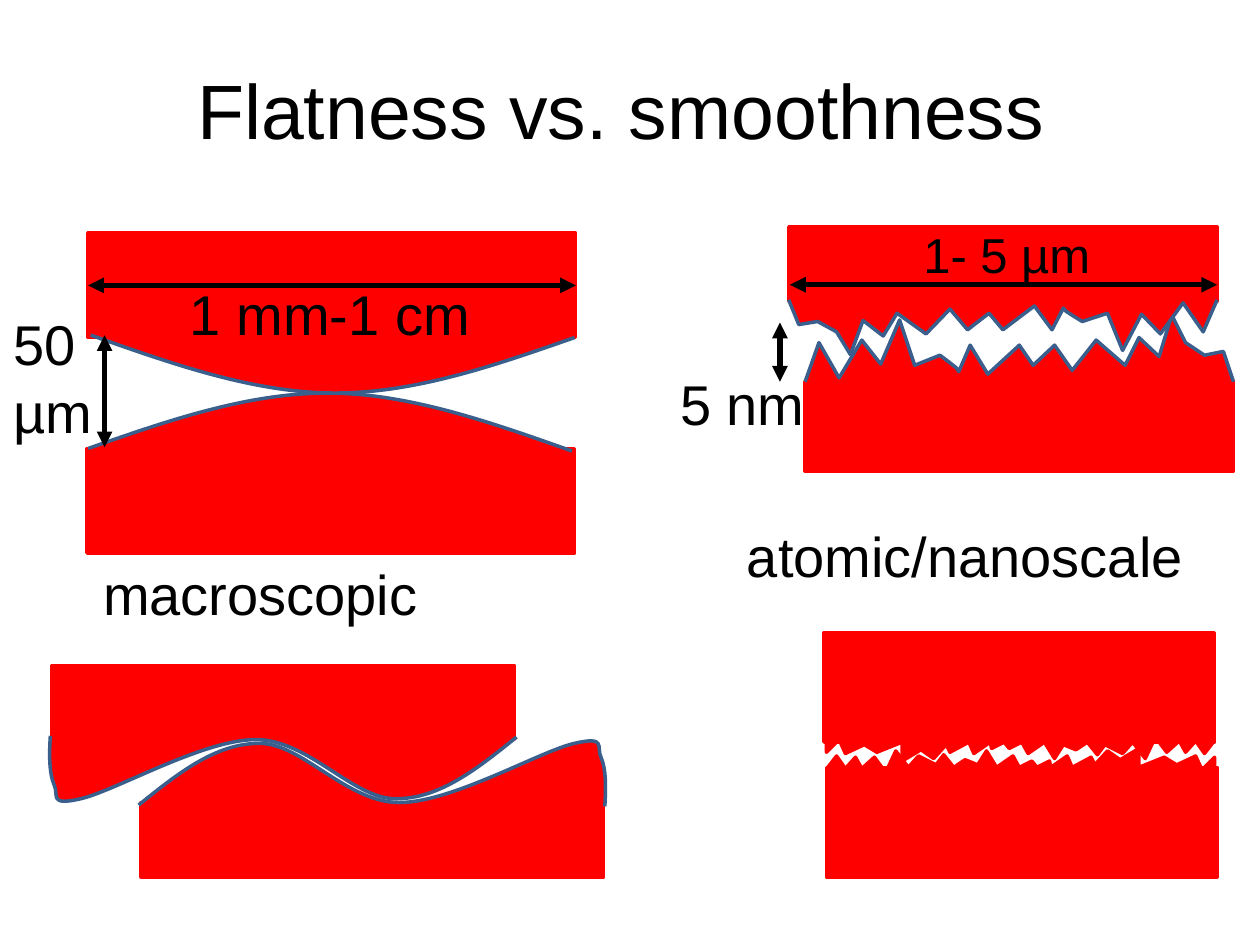
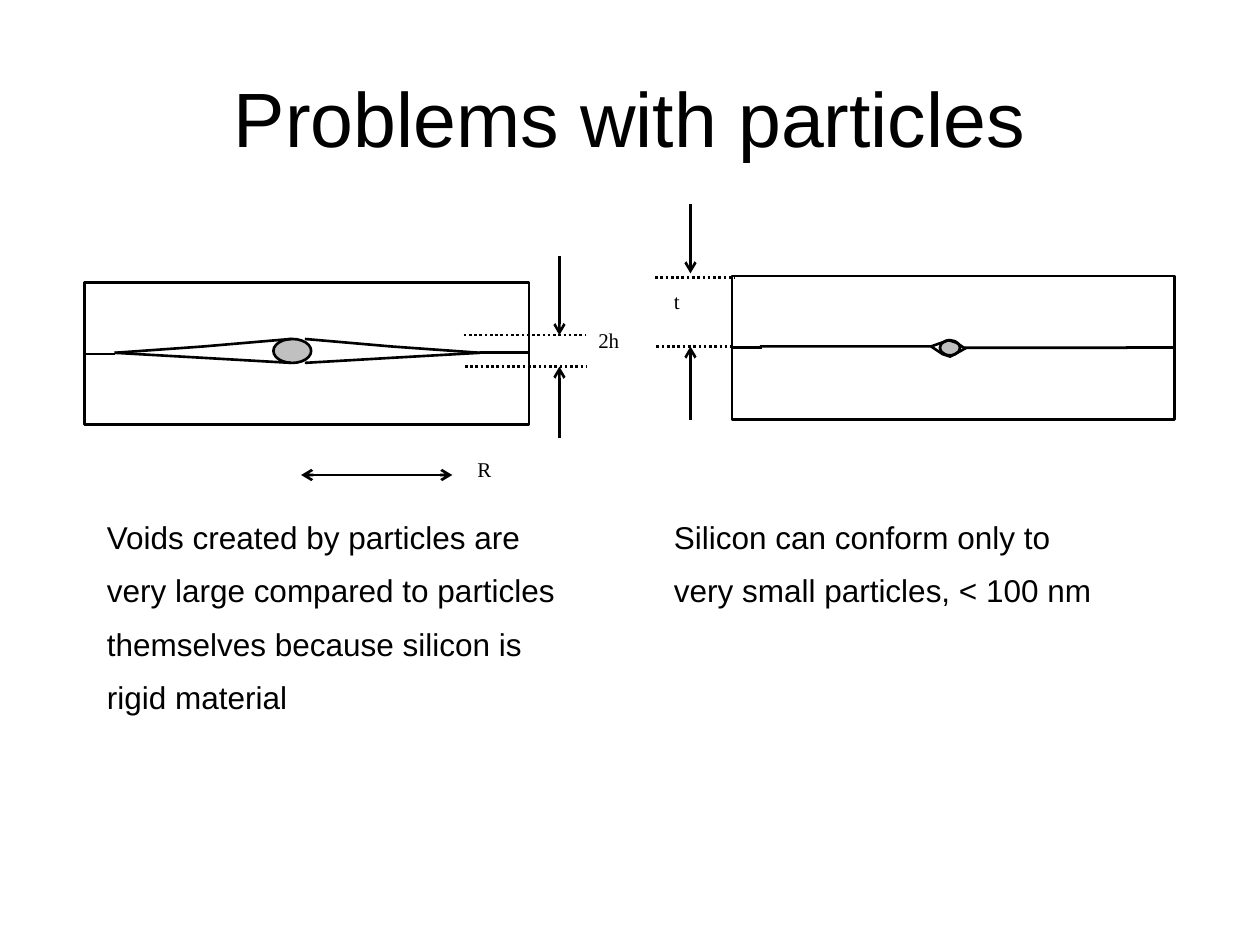
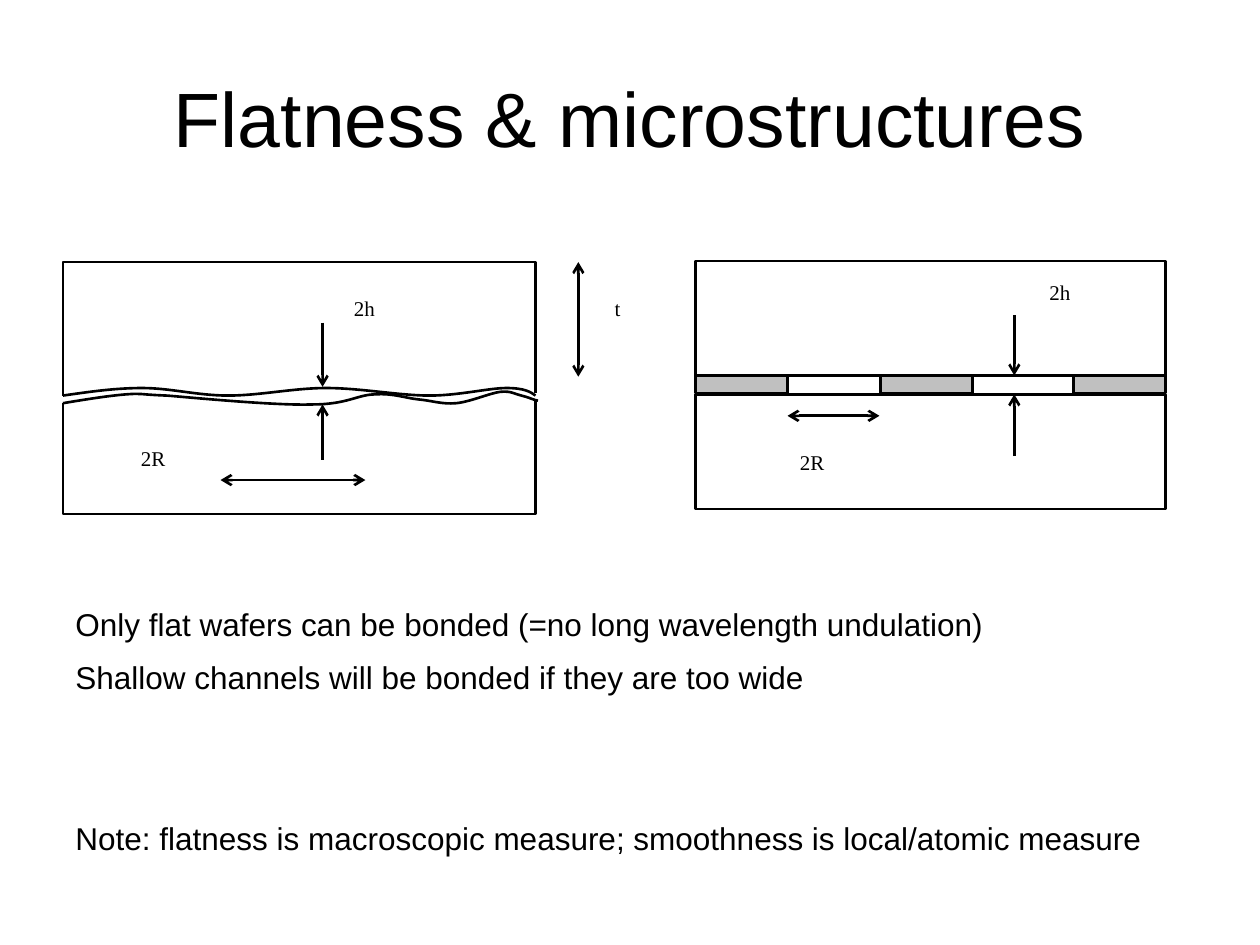
from dataclasses import dataclass
from typing import Optional

from lxml import etree
from pptx import Presentation
from pptx import util as u
from pptx.dml.color import RGBColor
from pptx.enum import dml, shapes, text
from pptx.oxml import ns

EMU_PER_PX = 9144  # 100 px to the inch
BLACK, WHITE, GREY, RED, BLUE = "000000", "FFFFFF", "C0C0C0", "FF0000", "3A5F8C"
SANS, SERIF = "Arial", "Times New Roman"

Points = list[tuple[float, float]]


@dataclass(frozen=True)
class Box:
    left: int
    top: int
    width: int
    height: int


@dataclass(frozen=True)
class Line:
    x1: int
    y1: int
    x2: int
    y2: int
    tail: bool = True
    head: bool = False
    dotted: bool = False


@dataclass(frozen=True)
class Label:
    words: str
    box: Box
    size: int = 12


@dataclass(frozen=True)
class Pair:
    """Two facing bodies; the upper surface is the lower one given a half turn."""
    lower: Box
    upper: Box
    surface: Points
    x_sum: int
    lower_base: int
    upper_base: int
    stretch: float = 1.0
    edge: str = BLUE
    curved: bool = False


def px(value: float) -> int:
    return u.Emu(round(value * EMU_PER_PX))


def color(value: str) -> RGBColor:
    return RGBColor.from_string(value)


def place(box: Box) -> tuple[int, int, int, int]:
    return px(box.left), px(box.top), px(box.width), px(box.height)


def paint(shape, fill: Optional[str], line: Optional[str], width: float = 1.5) -> None:
    shape.shadow.inherit = False
    if fill:
        shape.fill.solid()
        shape.fill.fore_color.rgb = color(fill)
    else:
        shape.fill.background()
    if line:
        shape.line.color.rgb = color(line)
        shape.line.width = u.Pt(width)
    else:
        shape.line.fill.background()


def add_preset(slide, box: Box, fill: str, *, kind=shapes.MSO_SHAPE.RECTANGLE,
               line: Optional[str] = BLACK, width: float = 1.5):
    shape = slide.shapes.add_shape(kind, *place(box))
    paint(shape, fill, line, width)
    return shape


def bend(shape) -> None:
    """Turn every three straight steps of an outline into one cubic curve."""
    steps = list(shape._element.iter(ns.qn("a:lnTo")))
    for i in range(0, len(steps), 3):
        first, *others = steps[i:i + 3]
        first.tag = ns.qn("a:cubicBezTo")
        for step in others:
            first.append(step[0])
            step.getparent().remove(step)


def add_outline(slide, points: Points, *, fill: Optional[str] = None,
                line: str = BLACK, width: float = 1.5, curved: bool = False) -> None:
    start, *rest = [(px(x), px(y)) for x, y in points]
    builder = slide.shapes.build_freeform(*start, scale=1.0)
    builder.add_line_segments(rest, close=False)
    shape = builder.convert_to_shape()
    paint(shape, fill, line, width)
    if curved:
        bend(shape)


def add_text(slide, words: str, box: Box, *, size: int, font: str = SANS,
             align=text.PP_ALIGN.LEFT, anchor=text.MSO_ANCHOR.TOP,
             fill: Optional[str] = None, gaps: tuple[int, ...] = (),
             tab: Optional[int] = None) -> None:
    """Write one paragraph per line; gaps holds the points above each one."""
    if fill:
        shape = add_preset(slide, box, fill, line=None)
    else:
        shape = slide.shapes.add_textbox(*place(box))
    frame = shape.text_frame
    frame.word_wrap = True
    frame.vertical_anchor = anchor
    frame.text = words
    for paragraph in frame.paragraphs:
        paragraph.alignment = align
        paragraph.font.size = u.Pt(size)
        paragraph.font.name = font
        paragraph.font.color.rgb = color(BLACK)
    for paragraph, gap in zip(frame.paragraphs, gaps):
        paragraph.space_before = u.Pt(gap)
        if tab:
            stops = etree.Element(ns.qn("a:tabLst"))
            etree.SubElement(stops, ns.qn("a:tab"), pos=str(px(tab)), algn="l")
            paragraph._p.pPr.find(ns.qn("a:defRPr")).addprevious(stops)


def add_line(slide, line: Line, *, width: float = 1.5, arrow: str = "arrow"):
    connector = slide.shapes.add_connector(
        shapes.MSO_CONNECTOR.STRAIGHT, px(line.x1), px(line.y1), px(line.x2), px(line.y2))
    connector.line.color.rgb = color(BLACK)
    connector.line.width = u.Pt(width)
    if line.dotted:
        connector.line.dash_style = dml.MSO_LINE.ROUND_DOT
    properties = connector.line._get_or_add_ln()
    for tag, shown in (("a:headEnd", line.head), ("a:tailEnd", line.tail)):
        if shown:
            etree.SubElement(properties, ns.qn(tag), type=arrow)
    etree.SubElement(connector._element.spPr, ns.qn("a:effectLst"))
    return connector


def add_labels(slide, labels: list[Label], *, font: str = SANS,
               fill: Optional[str] = None) -> None:
    for label in labels:
        add_text(slide, label.words, label.box, size=label.size, font=font, fill=fill)


def add_titled_slide(presentation, title: str, box: Box = Box(50, 30, 900, 125)):
    slide = presentation.slides.add_slide(presentation.slide_layouts[6])
    add_text(slide, title, box, size=44, align=text.PP_ALIGN.CENTER,
             anchor=text.MSO_ANCHOR.MIDDLE)
    return slide


def add_pair(slide, pair: Pair):
    """Draw both bodies and return the upper block."""
    turned = [(pair.x_sum - x, pair.upper_base + (pair.lower_base - y) * pair.stretch)
              for x, y in pair.surface]
    for box, surface in ((pair.lower, pair.surface), (pair.upper, turned)):
        block = add_preset(slide, box, RED, line=RED, width=2)
        add_outline(slide, surface, fill=RED, line=pair.edge, width=2, curved=pair.curved)
    return block


def add_half_frames(slide, left: int, right: int, seam: int, seam_end: int,
                    top: int, bottom: int) -> None:
    for edge in (top, bottom):
        add_outline(slide, [(seam_end, seam), (right, seam), (right, edge),
                            (left, edge), (left, seam)])


# Curved outlines: a start, then two control points and an end for each curve.
BOW = [(70, 356), (133, 334), (196, 312), (260, 312),
       (324, 312), (389, 335), (454, 358)]
WAVE = [(110, 639), (141, 614), (171, 590), (206, 590),
        (240, 590), (275, 637), (317, 637),
        (359, 637), (429, 596), (456, 590),
        (482, 584), (473, 593), (477, 601),
        (481, 610), (481, 625), (480, 640)]
UPPER_RIPPLE = [(50, 314), (71, 311), (91, 308), (113, 308),
                (135, 308), (157, 314), (181, 314),
                (206, 314), (233, 308), (259, 308),
                (286, 308), (317, 314), (341, 314),
                (364, 314), (388, 308), (402, 308),
                (416, 308), (421, 311), (425, 314)]
LOWER_RIPPLE = [(50, 320), (68, 317), (87, 314), (100, 313),
                (114, 312), (108, 313), (133, 314),
                (157, 316), (220, 322), (248, 321),
                (276, 321), (284, 313), (298, 313),
                (312, 312), (322, 316), (332, 317),
                (343, 318), (351, 321), (362, 320),
                (373, 319), (389, 312), (397, 311),
                (406, 310), (409, 313), (414, 314),
                (419, 315), (425, 318), (427, 318)]
JAGGED = [(639, 303), (650, 272), (666, 300), (684, 270), (699, 289), (714, 254),
          (726, 290), (746, 282), (754, 288), (759, 292), (761, 295), (770, 274),
          (784, 297), (809, 274), (820, 290), (837, 274), (851, 294), (870, 270),
          (893, 290), (904, 268), (920, 283), (930, 250), (941, 272), (956, 282),
          (971, 279), (979, 303)]
GRAINY = [(657, 609), (664, 600), (671, 610), (679, 601), (684, 610), (694, 601),
          (703, 613), (711, 596), (721, 609), (729, 600), (743, 607), (749, 599),
          (757, 609), (766, 603), (776, 607), (783, 596), (791, 609), (804, 600),
          (809, 609), (819, 604), (823, 609), (833, 604), (834, 609), (847, 600),
          (851, 609), (866, 601), (869, 607), (879, 596), (889, 603), (904, 594),
          (904, 609), (924, 601), (934, 607), (949, 600), (954, 611), (964, 601),
          (964, 609)]


def build_smoothness(presentation) -> None:
    slide = add_titled_slide(presentation, "Flatness vs. smoothness", Box(62, 14, 862, 145))
    bowed = add_pair(slide, Pair(Box(69, 356, 387, 83), Box(70, 185, 387, 83),
                                 BOW, 526, 356, 268, curved=True))
    for pair in (
        Pair(Box(112, 637, 367, 59), Box(41, 528, 367, 59), WAVE, 520, 639, 585, curved=True),
        Pair(Box(639, 303, 340, 71), Box(626, 180, 340, 59), JAGGED, 1605, 303, 238, 0.82),
        Pair(Box(656, 609, 310, 87), Box(654, 502, 310, 87), GRAINY, 1620, 609, 589, edge=RED),
    ):
        add_pair(slide, pair)

    span = add_line(slide, Line(457, 226, 70, 226, head=True), width=3, arrow="triangle")
    span.begin_connect(bowed, 3)
    span.end_connect(bowed, 1)
    for x1, y1, x2, y2 in ((83, 266, 83, 355), (619, 256, 619, 303), (966, 226, 627, 226)):
        add_line(slide, Line(x1, y1, x2, y2, head=True), width=3, arrow="triangle")
    add_labels(slide, [
        Label("macroscopic", Box(72, 439, 407, 64), 32),
        Label("atomic/nanoscale", Box(583, 409, 377, 64), 32),
        Label("50 µm", Box(1, 241, 97, 118), 32),
        Label("5 nm", Box(530, 288, 124, 64), 32),
        Label("1 mm-1 cm", Box(141, 217, 327, 64), 32),
        Label("1- 5 µm", Box(723, 173, 226, 57), 28),
    ])


def build_particles(presentation) -> None:
    slide = add_titled_slide(presentation, "Problems with particles")
    for particle in (Box(217, 269, 30, 19), Box(746, 270, 16, 12)):
        add_preset(slide, particle, GREY, kind=shapes.MSO_SHAPE.OVAL)

    for tip, middle, end in ((91, 161, 231), (381, 311, 242)):
        for middle_y, end_y in ((275, 269), (284, 288)):
            add_outline(slide, [(tip, 280), (middle, middle_y), (end, end_y)])
    add_half_frames(slide, 67, 420, 280, 381, 224, 337)
    add_half_frames(slide, 581, 932, 276, 894, 219, 333)
    add_outline(slide, [(895, 276), (765, 276), (759, 272), (753, 270), (739, 275), (603, 275)])
    add_outline(slide, [(739, 275), (748, 281), (754, 283), (758, 281), (767, 276)])

    add_labels(slide, [
        Label("R", Box(369, 357, 51, 45)),
        Label("2h", Box(465, 255, 56, 53)),
        Label("t", Box(525, 224, 44, 45)),
    ], font=SERIF, fill=WHITE)
    for line in (
        Line(67, 281, 91, 281, tail=False),
        Line(581, 276, 605, 276, tail=False),
        Line(239, 377, 359, 377, head=True),
        Line(444, 203, 444, 266),
        Line(444, 348, 444, 291),
        Line(368, 266, 465, 266, tail=False, dotted=True),
        Line(369, 291, 465, 291, tail=False, dotted=True),
        Line(548, 162, 548, 217),
        Line(548, 333, 548, 275),
        Line(521, 275, 581, 275, tail=False, dotted=True),
        Line(520, 220, 583, 220, tail=False, dotted=True),
    ):
        add_line(slide, line)

    add_text(slide, "Voids created by particles are\tSilicon can conform only to\n"
             "very large compared to particles\tvery small particles, < 100 nm\n"
             "themselves because silicon is\nrigid material",
             Box(75, 406, 866, 176), size=18, gaps=(9,) * 4, tab=450)


def build_microstructures(presentation) -> None:
    slide = add_titled_slide(presentation, "Flatness & microstructures")
    add_outline(slide, [(50, 314), (50, 208), (425, 208), (425, 312)])
    for ripple in (UPPER_RIPPLE, LOWER_RIPPLE):
        add_outline(slide, ripple, curved=True)
    add_outline(slide, [(50, 320), (50, 408), (425, 408), (425, 317)])

    for wafer_top in (313, 207):
        add_preset(slide, Box(552, wafer_top, 373, 91), WHITE)
    for spacer_left in (552, 699, 852):
        add_preset(slide, Box(spacer_left, 298, 73, 14), GREY)

    add_labels(slide, [
        Label("2h", Box(271, 230, 89, 55)),
        Label("2R", Box(102, 349, 63, 43)),
        Label("2R", Box(625, 352, 86, 41)),
        Label("2h", Box(823, 217, 62, 51)),
        Label("t", Box(478, 230, 62, 38)),
    ], font=SERIF, fill=WHITE)
    for line in (
        Line(256, 365, 256, 321),
        Line(256, 256, 256, 307),
        Line(175, 381, 290, 381, head=True),
        Line(625, 330, 698, 330, head=True),
        Line(805, 250, 805, 298),
        Line(805, 362, 805, 313),
        Line(459, 208, 459, 299, head=True),
    ):
        add_line(slide, line)

    add_text(slide, "Only flat wafers can be bonded (=no long wavelength undulation)\n"
             "Shallow channels will be bonded if they are too wide\n"
             "Note: flatness is macroscopic measure; smoothness is local/atomic measure",
             Box(50, 475, 875, 221), size=18, gaps=(9, 9, 70))


def main() -> None:
    presentation = Presentation()
    presentation.slide_width, presentation.slide_height = px(1000), px(750)
    build_smoothness(presentation)
    build_particles(presentation)
    build_microstructures(presentation)
    presentation.save("out.pptx")


if __name__ == "__main__":
    main()
